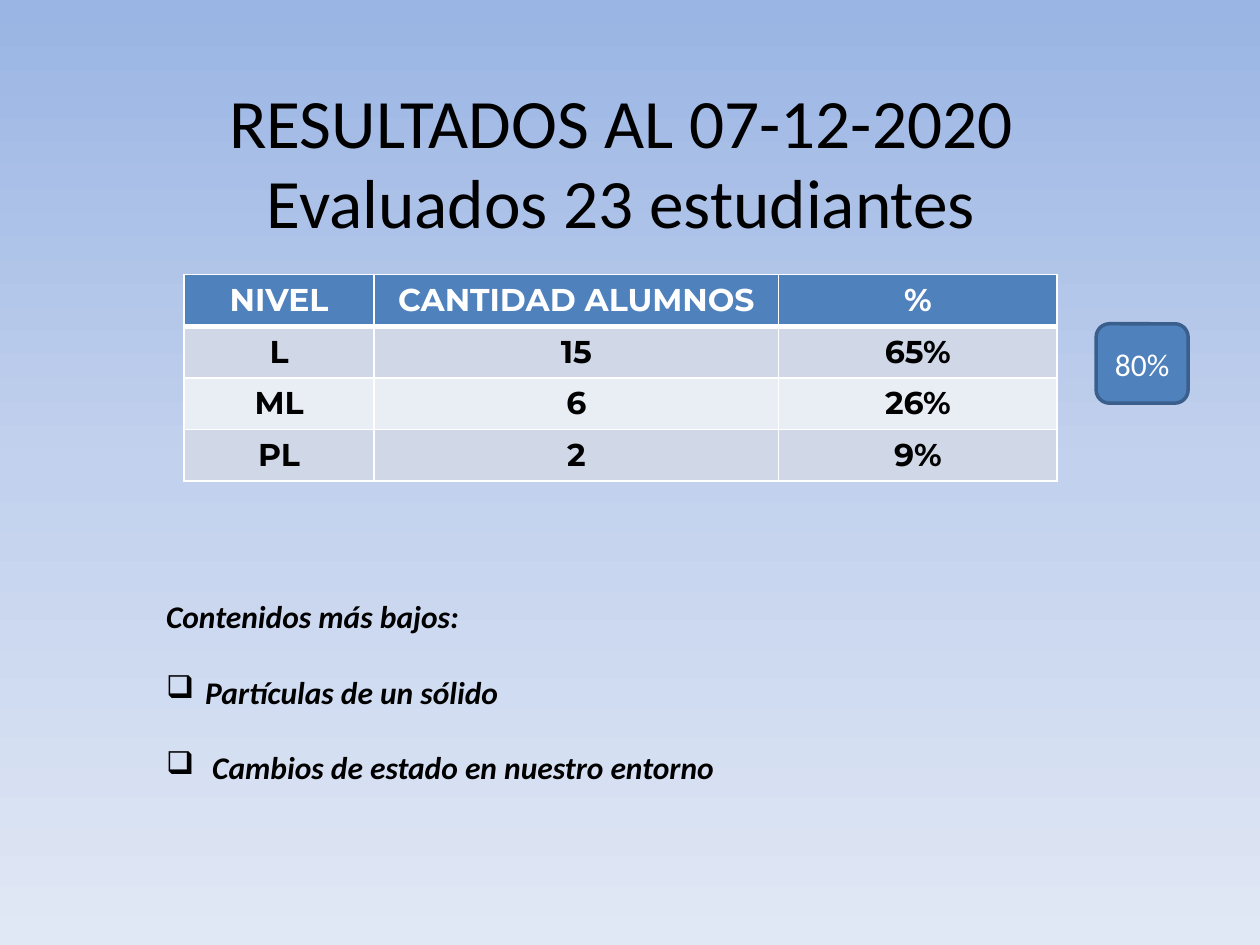
"""Build the slide with the evaluation results by level."""
import copy

from lxml import etree
from pptx import Presentation, util as u
from pptx.dml.color import RGBColor
from pptx.enum import shapes, text
from pptx.oxml.ns import qn

WIDTH, HEIGHT = 10, 7.5
BACKGROUND = ["9AB5E4", "C2D1ED", "E1E8F5"]
BLUE, BLUE_EDGE, WHITE, BLACK = "4F81BD", "3A5F8C", "FFFFFF", "000000"
BANDS = ["D0D8E8", "E9EDF4"]

TITLE = "RESULTADOS AL 07-12-2020\nEvaluados 23 estudiantes"
RESULTS = [
    ("NIVEL", "CANTIDAD ALUMNOS", "%"),
    ("L", "15", "65%"),
    ("ML", "6", "26%"),
    ("PL", "2", "9%"),
]
COLUMNS, ROW_HEIGHT = [1.51, 3.21, 2.21], 0.41
LOWEST_HEADING = "Contenidos más bajos:"
LOWEST_CONTENTS = ["Partículas de un sólido", " Cambios de estado en nuestro entorno"]
ACHIEVED = "80%"


def rgb(color):
    return RGBColor.from_string(color)


def box(left, top, width, height):
    return [u.Inches(side) for side in (left, top, width, height)]


def write(paragraph, content, size=18, font="Calibri", color=BLACK, bold=False,
          italic=False, align=text.PP_ALIGN.CENTER, spacing=None, before=0, bullet=None):
    paragraph.text = content
    paragraph.alignment = align
    paragraph.line_spacing = spacing
    paragraph.space_before = u.Pt(before)
    for run in paragraph.runs:
        run.font.size, run.font.name = u.Pt(size), font
        run.font.bold, run.font.italic = bold, italic
        run.font.color.rgb = rgb(color)
    if bullet:
        properties = paragraph._p.get_or_add_pPr()
        indent = u.Inches(0.31)
        properties.set("marL", str(indent))
        properties.set("indent", str(-indent))
        etree.SubElement(properties, qn("a:buChar"), char=bullet)


def add_background(slide):
    fill = slide.background.fill
    fill.gradient()
    fill.gradient_angle = 270
    first = slide.element.find(".//" + qn("a:gs"))
    first.addnext(copy.deepcopy(first))
    for index, (stop, color) in enumerate(zip(fill.gradient_stops, BACKGROUND)):
        stop.position = index / (len(BACKGROUND) - 1)
        stop.color.rgb = rgb(color)


def add_text_frame(slide, place, anchor=text.MSO_ANCHOR.TOP):
    frame = slide.shapes.add_textbox(*box(*place)).text_frame
    frame.word_wrap = True
    frame.vertical_anchor = anchor
    return frame


def add_borders(cell, widths):
    properties = cell._tc.get_or_add_tcPr()
    for position, (side, width) in enumerate(widths.items()):
        line = etree.Element(qn("a:ln" + side), w=str(u.Pt(width)))
        solid = etree.SubElement(line, qn("a:solidFill"))
        etree.SubElement(solid, qn("a:srgbClr"), val=WHITE)
        properties.insert(position, line)


def add_results(slide, left, top):
    place = box(left, top, sum(COLUMNS), ROW_HEIGHT * len(RESULTS))
    table = slide.shapes.add_table(len(RESULTS), len(COLUMNS), *place).table
    for column, width in zip(table.columns, COLUMNS):
        column.width = u.Inches(width)
    for r, levels in enumerate(RESULTS):
        header = r == 0
        for c, value in enumerate(levels):
            cell = table.cell(r, c)
            cell.fill.solid()
            cell.fill.fore_color.rgb = rgb(BLUE if header else BANDS[(r - 1) % 2])
            write(cell.text_frame.paragraphs[0], value, font="Montserrat",
                  color=WHITE if header else BLACK, bold=True)
            add_borders(cell, {"L": 1, "R": 1, "T": 3 if r == 1 else 1, "B": 3 if header else 1})


def add_lowest(slide, place):
    frame = add_text_frame(slide, place)
    style = dict(bold=True, italic=True, align=text.PP_ALIGN.LEFT)
    write(frame.paragraphs[0], LOWEST_HEADING, **style)
    for content in LOWEST_CONTENTS:
        write(frame.add_paragraph(), content, before=21.5, bullet="❑", **style)


def add_achieved(slide, place):
    badge = slide.shapes.add_shape(shapes.MSO_SHAPE.ROUNDED_RECTANGLE, *box(*place))
    badge.shadow.inherit = False
    badge.fill.solid()
    badge.fill.fore_color.rgb = rgb(BLUE)
    badge.line.color.rgb = rgb(BLUE_EDGE)
    badge.line.width = u.Pt(2)
    badge.text_frame.vertical_anchor = text.MSO_ANCHOR.MIDDLE
    write(badge.text_frame.paragraphs[0], ACHIEVED, color=WHITE)


def main():
    deck = Presentation()
    deck.slide_width, deck.slide_height = u.Inches(WIDTH), u.Inches(HEIGHT)
    slide = deck.slides.add_slide(deck.slide_layouts[6])
    add_background(slide)
    heading = add_text_frame(slide, (0.43, 0.68, 9, 1.25), text.MSO_ANCHOR.MIDDLE)
    write(heading.paragraphs[0], TITLE, size=39.6, spacing=0.97)
    add_results(slide, 1.46, 2.18)
    add_lowest(slide, (1.22, 4.69, 7.8, 1.92))
    add_achieved(slide, (8.7, 2.57, 0.73, 0.63))
    deck.save("out.pptx")


if __name__ == "__main__":
    main()
